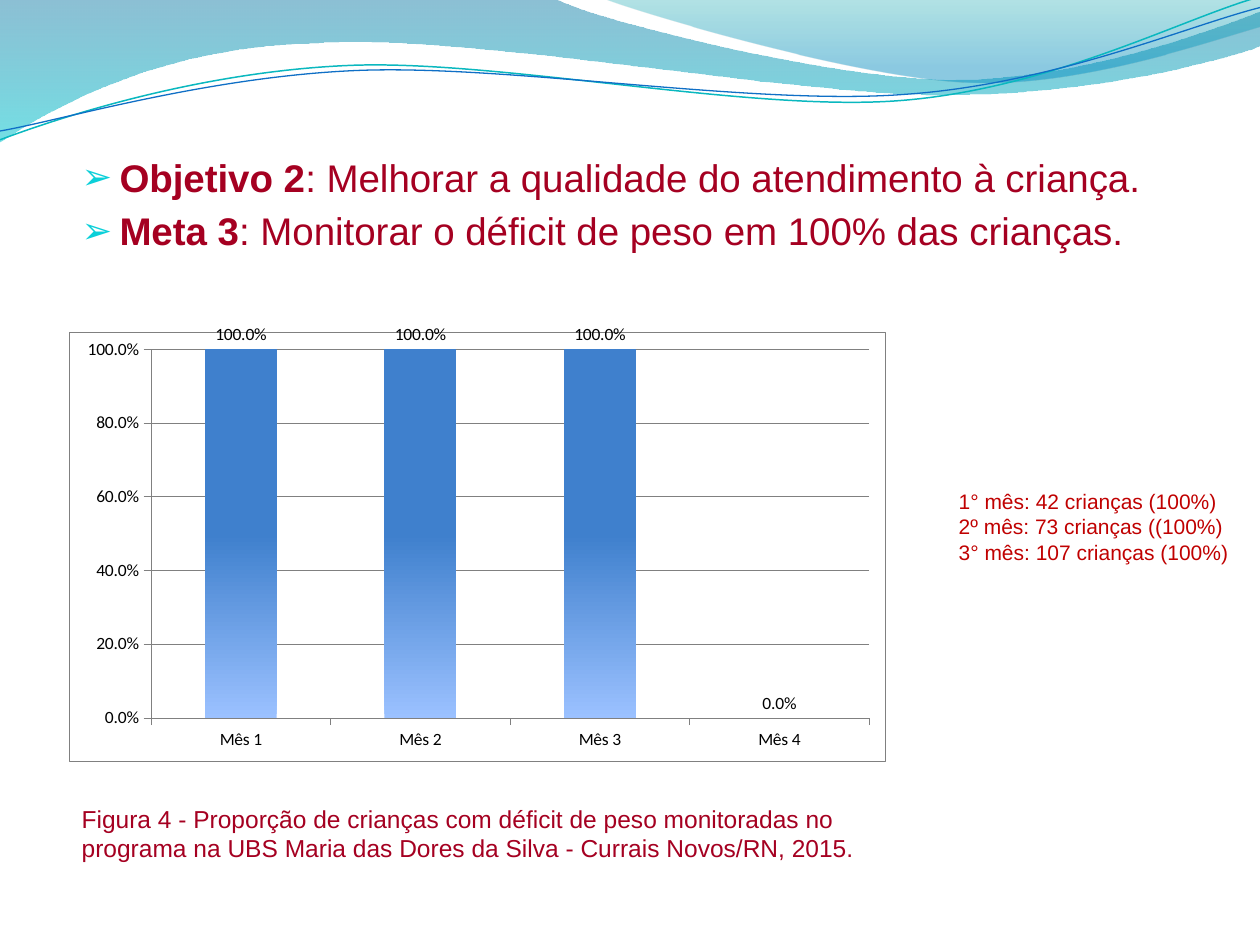
from lxml.etree import SubElement
from pptx import Presentation
from pptx.chart.data import CategoryChartData
from pptx.dml.color import RGBColor
from pptx.enum.chart import XL_CHART_TYPE, XL_LABEL_POSITION, XL_TICK_MARK
from pptx.enum.text import PP_ALIGN
from pptx.oxml import parse_xml
from pptx.oxml.ns import nsdecls, qn
from pptx.util import Inches, Pt

COLS, ROWS = 100, 75
WIDTH, HEIGHT = Inches(10), Inches(7.5)
WINE, RED, GREY = "A50021", "C00000", "808080"

# Each path: start, then lines (x, y) and curves (two controls and an end), in inches.
FILLS = [
    ([(0, 0), (4.4, -0.01), (4.76, 0.17, 6.64, 0.63, 7.58, 0.63),
      (8.53, 0.63, 9.58, 0.26, 10, 0.09), (10.01, 0.36),
      (9.83, 0.44, 8.7, 0.76, 7.46, 0.75), (6.22, 0.75, 3.82, 0.28, 2.57, 0.34),
      (1.29, 0.36, 0.46, 0.83, -0.01, 1.13)],
     [(0, "0074A1"), (1, "00C6CF")], (45, 55)),
    ([(4.79, -0.01), (5.09, 0.11, 6.82, 0.62, 7.69, 0.65),
      (8.56, 0.69, 9.61, 0.32, 10, 0.21), (10, 0)],
     [(0, "00A1A9"), (0.8, "008BBF")], (30, 45)),
]
LINES = [
    ([(0, 1.11), (0.48, 0.93, 1.58, 0.57, 2.77, 0.52),
      (3.95, 0.47, 5.93, 0.89, 7.13, 0.8), (8.33, 0.71, 9.38, 0.15, 9.98, -0.02)],
     "0AB8BF", 0.85),
    ([(0, 1.04), (0.47, 0.96, 1.64, 0.61, 2.83, 0.56),
      (4.03, 0.51, 5.97, 0.84, 7.17, 0.75), (8.36, 0.67, 9.41, 0.21, 10, 0.06)],
     "0F6FC6", 0.75),
]


def rgb(code):
    return RGBColor.from_string(code)


def place(col, row, cols, rows):
    """Turn grid columns and rows into slide lengths."""
    return (int(WIDTH * col / COLS), int(HEIGHT * row / ROWS),
            int(WIDTH * cols / COLS), int(HEIGHT * rows / ROWS))


def trace(slide, route, close):
    """Draw a freeform through the ends, then bend its curved segments."""
    route = [[Inches(n) for n in part] for part in route]
    pen = slide.shapes.build_freeform(*route[0])
    pen.add_line_segments([part[-2:] for part in route[1:]], close=close)
    shape = pen.convert_to_shape()
    shape.shadow.inherit = False
    segments = list(shape._element.iter(qn("a:lnTo")))
    for segment, part in zip(segments, route[1:]):
        if len(part) == 6:
            segment.tag = qn("a:cubicBezTo")
            segment.remove(segment[0])
            for x, y in zip(part[::2], part[1::2]):
                SubElement(segment, qn("a:pt"),
                           x=str(x - shape.left), y=str(y - shape.top))
    return shape


def blend(fill, stops, angle):
    fill.gradient()
    fill.gradient_angle = angle
    for stop, (spot, code) in zip(fill.gradient_stops, stops):
        stop.position = spot
        stop.color.rgb = rgb(code)


def waves(slide):
    for route, stops, clear in FILLS:
        shape = trace(slide, route, True)
        blend(shape.fill, stops, 270)
        shape.line.fill.background()
        for node, share in zip(shape._element.iter(qn("a:srgbClr")), clear):
            SubElement(node, qn("a:alpha"), val=str(share * 1000))
    for route, code, width in LINES:
        shape = trace(slide, route, False)
        shape.fill.background()
        shape.line.color.rgb = rgb(code)
        shape.line.width = Pt(width)


def style(font, size, code):
    font.name = "Arial"
    font.size = Pt(size)
    font.color.rgb = rgb(code)


def write(slide, box, lines, size, code, align=PP_ALIGN.LEFT):
    frame = slide.shapes.add_textbox(*place(*box)).text_frame
    frame.word_wrap = True
    frame.text = "\n".join(lines)
    for para in frame.paragraphs:
        para.alignment = align
        for run in para.runs:
            style(run.font, size, code)
    return frame.paragraphs


def goals(slide, box, items):
    """Bulleted lines, each with a bold lead."""
    leads = [lead for lead, _ in items]
    paras = write(slide, box, leads, 22, WINE, PP_ALIGN.JUSTIFY)
    for para, (_, rest) in zip(paras, items):
        para.runs[0].font.bold = True
        run = para.add_run()
        run.text = rest
        style(run.font, 22, WINE)
        props = para._p.get_or_add_pPr()
        props.set("marL", str(Inches(0.3)))
        props.set("indent", str(-Inches(0.3)))
        space = SubElement(props, qn("a:spcBef"))
        SubElement(space, qn("a:spcPct"), val="20000")
        tint = SubElement(props, qn("a:buClr"))
        SubElement(tint, qn("a:srgbClr"), val="0BD0D9")
        SubElement(props, qn("a:buSzPct"), val="95000")
        SubElement(props, qn("a:buFont"), typeface="Arial")
        SubElement(props, qn("a:buChar"), char="➢")


def counts(slide, box, lines):
    for para in write(slide, box, lines, 12, RED, PP_ALIGN.JUSTIFY):
        para._p.get_or_add_pPr().set("marL", str(Inches(0.09)))


def panel(border):
    """White chart background with the given outline."""
    return parse_xml(
        f'<c:spPr {nsdecls("c", "a")}><a:solidFill><a:srgbClr val="FFFFFF"/></a:solidFill>'
        f'<a:ln w="3175">{border}</a:ln></c:spPr>')


def frame_plot(chart):
    space = chart._chartSpace
    edge = f'<a:solidFill><a:srgbClr val="{GREY}"/></a:solidFill>'
    space.find(qn("c:txPr")).addprevious(panel(edge))
    area = space.find(qn("c:chart")).find(qn("c:plotArea"))
    area.append(panel("<a:noFill/>"))
    for old in area.findall(qn("c:layout")):
        area.remove(old)
    spots = {"x": 0.1, "y": 0.04, "w": 0.88, "h": 0.86}
    marks = "".join(f'<c:{key}Mode val="edge"/>' for key in "xy")
    marks += "".join(f'<c:{key} val="{val}"/>' for key, val in spots.items())
    area.insert(0, parse_xml(
        f'<c:layout {nsdecls("c")}><c:manualLayout><c:layoutTarget val="inner"/>'
        f'{marks}</c:manualLayout></c:layout>'))


def bars(slide, box):
    data = CategoryChartData(number_format="0.0%")
    data.categories = [f"Mês {n}" for n in range(1, 5)]
    data.add_series("Series 1", (1, 1, 1, 0))
    chart = slide.shapes.add_chart(
        XL_CHART_TYPE.COLUMN_CLUSTERED, *place(*box), data).chart
    chart.has_legend = chart.has_title = False
    chart.font.name, chart.font.size = "Calibri", Pt(10)
    chart.font.color.rgb = rgb("000000")
    scale = chart.value_axis
    scale.minimum_scale, scale.maximum_scale, scale.major_unit = 0, 1, 0.2
    scale.tick_labels.number_format = "0.0%"
    scale.tick_labels.number_format_is_linked = False
    for axis in (scale, chart.category_axis):
        axis.major_tick_mark = XL_TICK_MARK.OUTSIDE
    for part in (scale, chart.category_axis, scale.major_gridlines):
        part.format.line.color.rgb = rgb(GREY)
        part.format.line.width = Pt(0.25)
    plot = chart.plots[0]
    plot.gap_width, plot.vary_by_categories = 150, False
    plot.has_data_labels = True
    labels = plot.data_labels
    labels.show_value = True
    labels.number_format, labels.number_format_is_linked = "0.0%", False
    labels.position = XL_LABEL_POSITION.OUTSIDE_END
    blend(plot.series[0].format.fill, [(0, "9BC1FF"), (0.5, "3F80CD")], 90)
    frame_plot(chart)


def main():
    deck = Presentation()
    deck.slide_width, deck.slide_height = WIDTH, HEIGHT
    slide = deck.slides.add_slide(deck.slide_layouts[6])
    waves(slide)
    counts(slide, (74.2, 38.3, 25.8, 7.1), [
        "1° mês: 42 crianças (100%)",
        "2º mês: 73 crianças ((100%)",
        "3° mês: 107 crianças (100%) "])
    bars(slide, (5.5, 25.8, 64.8, 34.6))
    write(slide, (5.5, 63.3, 68.4, 5.7), [
        "Figura 4 - Proporção de crianças com déficit de peso monitoradas no "
        "programa na UBS Maria das Dores da Silva - Currais Novos/RN, 2015."], 14, WINE)
    goals(slide, (5.5, 11.7, 89.8, 6), [
        ("Objetivo 2", ": Melhorar a qualidade do atendimento à criança."),
        ("Meta 3", ": Monitorar o déficit de peso em 100% das crianças.")])
    deck.save("out.pptx")


if __name__ == "__main__":
    main()
